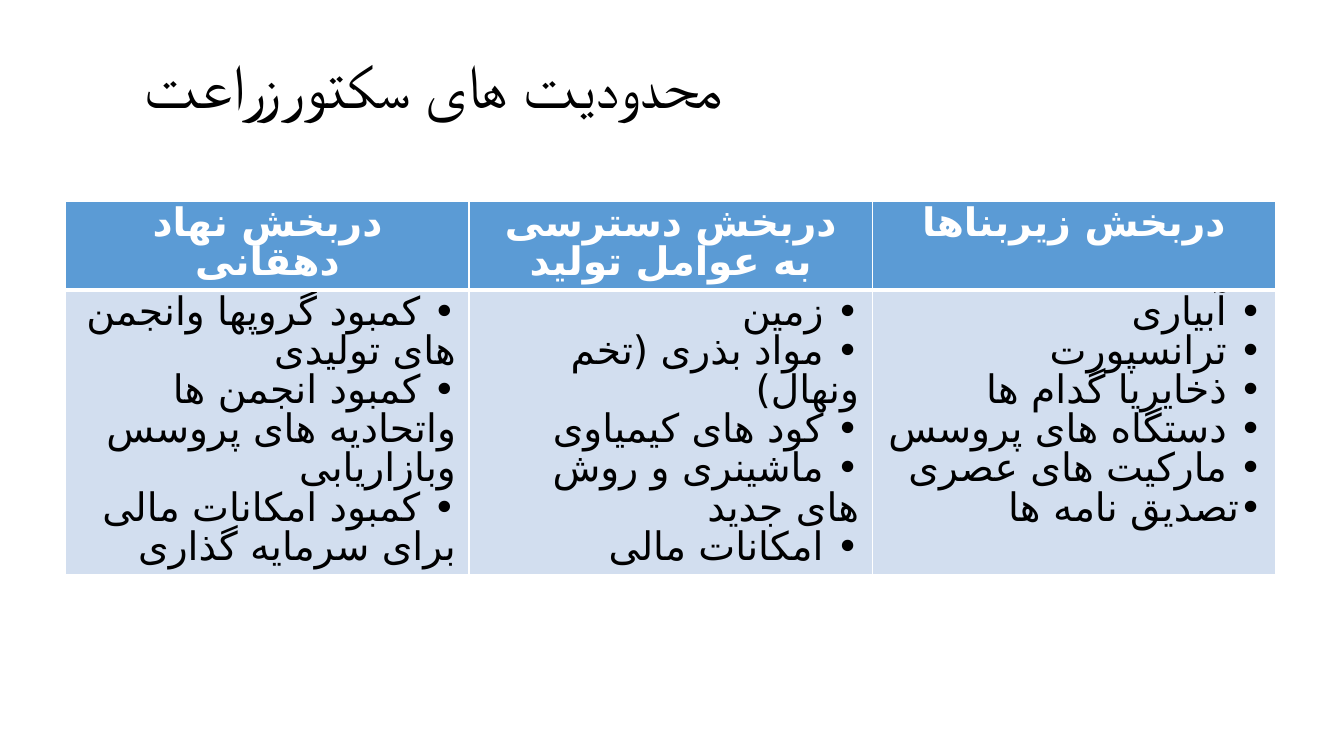
from dataclasses import dataclass
from typing import Optional

from lxml import etree
from pptx import Presentation
from pptx.dml.color import RGBColor
from pptx.enum.text import MSO_ANCHOR, PP_ALIGN
from pptx.oxml.ns import qn
from pptx.util import Pt

LEFT, CENTER, RIGHT = PP_ALIGN.LEFT, PP_ALIGN.CENTER, PP_ALIGN.RIGHT
MIDDLE, TOP = MSO_ANCHOR.MIDDLE, MSO_ANCHOR.TOP


@dataclass(frozen=True)
class Theme:
    font: str = "Calibri"
    title_script: str = "+mj-cs"
    body_script: str = "DejaVu Sans"
    title_size: int = 44
    table_size: int = 28
    black: str = "000000"
    white: str = "FFFFFF"
    header_fill: str = "5B9BD5"
    body_fill: str = "D2DEEF"


@dataclass(frozen=True)
class Sector:
    heading: str
    limits: list[str]


THEME = Theme()
TITLE = "محدودیت های سکتورزراعت"
SECTORS = [
    Sector("دربخش نهاد دهقانی", [
        " کمبود گروپها وانجمن های تولیدی",
        " کمبود انجمن ها واتحادیه های پروسس وبازاریابی",
        " کمبود امکانات مالی برای سرمایه گذاری",
    ]),
    Sector("دربخش دسترسی به عوامل تولید", [
        " زمین",
        " مواد بذری (تخم ونهال)",
        " کود های کیمیاوی",
        " ماشینری و روش های جدید",
        " امکانات مالی",
    ]),
    Sector("دربخش زیربناها", [
        " آبیاری",
        " ترانسپورت",
        " ذخایریا گدام ها",
        " دستگاه های پروسس",
        " مارکیت های عصری",
        "تصدیق نامه ها",
    ]),
]
COLUMN_WIDTH = 288
HEADER_HEIGHT = 63.2
BODY_HEIGHT = 203.2


def write_text(frame, lines: list[str], *, size: int, color: str, script: str,
               align, spacing, bold: bool = False, bullet: Optional[str] = None) -> None:
    frame.word_wrap = True
    for index, line in enumerate(lines):
        paragraph = frame.paragraphs[0] if index == 0 else frame.add_paragraph()
        paragraph.alignment = align
        paragraph.line_spacing = spacing
        if bullet:
            properties = paragraph._p.get_or_add_pPr()
            for key, value in (("marL", "0"), ("indent", "0"), ("rtl", "1")):
                properties.set(key, value)
            etree.SubElement(properties, qn("a:buFont"), typeface=script)
            etree.SubElement(properties, qn("a:buChar"), char=bullet)
        run = paragraph.add_run()
        run.text = line
        run.font.name = THEME.font
        run.font.size = Pt(size)
        run.font.bold = bold
        run.font.color.rgb = RGBColor.from_string(color)
        etree.SubElement(run.font._element, qn("a:cs"), typeface=script)


def style_cell(cell, fill: str, top_width: float, bottom_width: float) -> None:
    cell.margin_left = cell.margin_right = Pt(9.4)
    cell.margin_top = cell.margin_bottom = Pt(3.6)
    cell.vertical_anchor = TOP
    properties = cell._tc.get_or_add_tcPr()
    for side, width in (("L", 1), ("R", 1), ("T", top_width), ("B", bottom_width)):
        border = etree.SubElement(properties, qn(f"a:ln{side}"), w=str(Pt(width)))
        solid = etree.SubElement(border, qn("a:solidFill"))
        etree.SubElement(solid, qn("a:srgbClr"), val=THEME.white)
    cell.fill.solid()
    cell.fill.fore_color.rgb = RGBColor.from_string(fill)


def add_title(slide) -> None:
    title = slide.shapes.add_textbox(Pt(96), Pt(18), Pt(864), Pt(90))
    title.text_frame.vertical_anchor = MIDDLE
    write_text(title.text_frame, [TITLE], size=THEME.title_size, color=THEME.black,
               script=THEME.title_script, align=LEFT, spacing=0.9)


def add_limits_table(slide, sectors: list[Sector]) -> None:
    table = slide.shapes.add_table(
        2, len(sectors), Pt(47), Pt(144),
        Pt(COLUMN_WIDTH * len(sectors)), Pt(HEADER_HEIGHT + BODY_HEIGHT)).table
    table.horz_banding = False
    table.rows[0].height = Pt(HEADER_HEIGHT)
    table.rows[1].height = Pt(BODY_HEIGHT)
    shared = dict(size=THEME.table_size, script=THEME.body_script,
                  spacing=Pt(THEME.table_size))
    for column, sector in enumerate(sectors):
        table.columns[column].width = Pt(COLUMN_WIDTH)
        heading, limits = table.cell(0, column), table.cell(1, column)
        style_cell(heading, THEME.header_fill, 1, 3)
        style_cell(limits, THEME.body_fill, 3, 1)
        write_text(heading.text_frame, [sector.heading], color=THEME.white,
                   align=CENTER, bold=True, **shared)
        write_text(limits.text_frame, sector.limits, color=THEME.black,
                   align=RIGHT, bullet="•", **shared)


def main() -> None:
    presentation = Presentation()
    presentation.slide_width = Pt(960)
    presentation.slide_height = Pt(540)
    slide = presentation.slides.add_slide(presentation.slide_layouts[6])
    add_title(slide)
    add_limits_table(slide, SECTORS)
    presentation.save("out.pptx")


if __name__ == "__main__":
    main()
